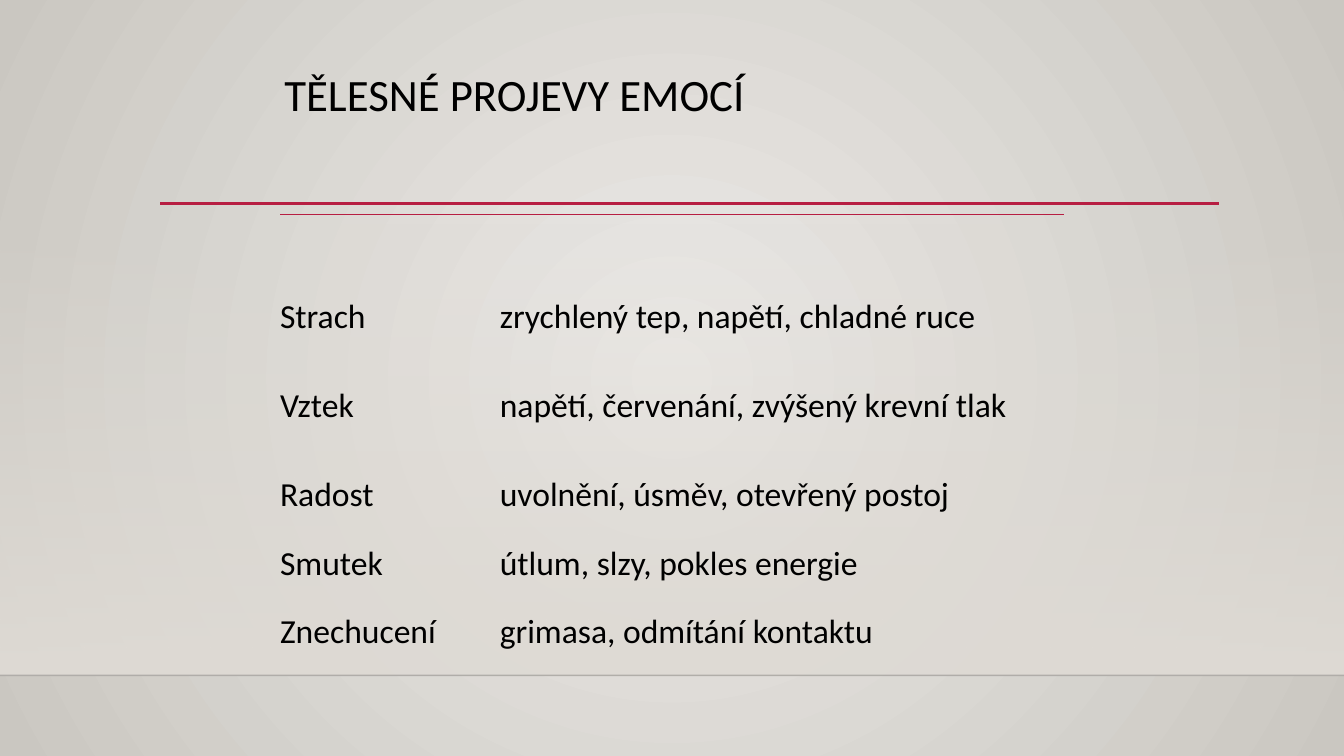
from lxml import etree
from pptx import Presentation
from pptx.dml.color import RGBColor
from pptx.enum.shapes import MSO_CONNECTOR, MSO_SHAPE
from pptx.enum.text import MSO_ANCHOR
from pptx.oxml.ns import qn
from pptx.util import Pt

STRAIGHT = MSO_CONNECTOR.STRAIGHT
RECTANGLE = MSO_SHAPE.RECTANGLE
MIDDLE = MSO_ANCHOR.MIDDLE

SLIDE_WIDTH, SLIDE_HEIGHT = 960, 540
NO_STYLE = "{2D5ABB26-0587-4C30-8999-92F81FD0307C}"
COLORS = {
    "center": "ECEAE7",
    "edge": "CAC7C1",
    "wall": "DFDBD5",
    "floor": "000001",
    "accent": "B71E42",
    "text": "000000",
}
TITLE = "TĚLESNÉ PROJEVY EMOCÍ"
EMOTIONS = [
    ("Strach", "zrychlený tep, napětí, chladné ruce"),
    ("Vztek", "napětí, červenání, zvýšený krevní tlak"),
    ("Radost", "uvolnění, úsměv, otevřený postoj"),
    ("Smutek", "útlum, slzy, pokles energie"),
    ("Znechucení", "grimasa, odmítání kontaktu"),
]
COLUMN_WIDTHS = [157, 403]
ROW_HEIGHTS = [49, 49, 78, 49, 49, 49]
CELL_FORMAT = {
    "margin_left": 0,
    "margin_right": Pt(14.4),
    "margin_top": Pt(7.2),
    "margin_bottom": Pt(7.2),
    "vertical_anchor": MIDDLE,
}


def rgb(name):
    return RGBColor.from_string(COLORS[name])


def set_format(target, values):
    for name, value in values.items():
        setattr(target, name, value)


def write(paragraph, text, size):
    paragraph.text = text
    font = paragraph.runs[0].font
    set_format(font, {"name": "Calibri", "size": Pt(size)})
    font.color.rgb = rgb("text")


def set_alpha(color_element, percent):
    etree.SubElement(color_element, qn("a:alpha")).set("val", str(percent * 1000))


def set_gradient(fill, names):
    fill.gradient()
    for stop, name in zip(fill.gradient_stops, names):
        stop.color.rgb = rgb(name)


def add_background(slide):
    set_gradient(slide.background.fill, ["center", "edge"])
    gradient = slide.element.find(".//" + qn("a:gradFill"))
    gradient.remove(gradient.find(qn("a:lin")))
    circle = etree.SubElement(gradient, qn("a:path"))
    circle.set("path", "circle")
    focus = etree.SubElement(circle, qn("a:fillToRect"))
    for side in "ltrb":
        focus.set(side, "50000")


def add_rule(slide, left, top, width, color, weight):
    rule = slide.shapes.add_connector(
        STRAIGHT, Pt(left), Pt(top), Pt(left + width), Pt(top))
    rule.line.color.rgb = rgb(color)
    rule.line.width = Pt(weight)
    etree.SubElement(rule.element.spPr, qn("a:effectLst"))
    return rule


def add_wall(slide, left, top, width, height):
    wall = slide.shapes.add_shape(
        RECTANGLE, Pt(left), Pt(top), Pt(width), Pt(height))
    wall.shadow.inherit = False
    wall.line.fill.background()
    set_gradient(wall.fill, ["wall", "wall"])
    wall.fill.gradient_angle = 270
    set_alpha(wall.element.find(".//" + qn("a:srgbClr")), 0)
    floor = add_rule(slide, left, top + height, width, "floor", 1)
    set_alpha(floor.element.find(".//" + qn("a:srgbClr")), 20)


def add_title(slide, left, top, width, height):
    frame = slide.shapes.add_textbox(
        Pt(left), Pt(top), Pt(width), Pt(height)).text_frame
    frame.word_wrap = True
    heading = frame.paragraphs[0]
    heading.line_spacing = 0.9
    write(heading, TITLE, 32)


def add_top_border(cell):
    border = etree.Element(qn("a:lnT"), w=str(Pt(0.75)))
    fill = etree.SubElement(border, qn("a:solidFill"))
    etree.SubElement(fill, qn("a:srgbClr"), val=COLORS["accent"])
    cell._tc.get_or_add_tcPr().insert(0, border)


def add_emotions(slide, left, top):
    frame = slide.shapes.add_table(
        len(ROW_HEIGHTS), len(COLUMN_WIDTHS), Pt(left), Pt(top),
        Pt(sum(COLUMN_WIDTHS)), Pt(sum(ROW_HEIGHTS)))
    table = frame.table
    set_format(table, {"first_row": False, "horz_banding": False})
    frame.element.find(".//" + qn("a:tableStyleId")).text = NO_STYLE
    for column, width in zip(table.columns, COLUMN_WIDTHS):
        column.width = Pt(width)
    for row, height in zip(table.rows, ROW_HEIGHTS):
        row.height = Pt(height)
    for cell in table.iter_cells():
        cell.fill.background()
    for cell in table.rows[0].cells:
        add_top_border(cell)
    for row_index, emotion in enumerate(EMOTIONS, 1):
        for column_index, text in enumerate(emotion):
            cell = table.cell(row_index, column_index)
            set_format(cell, CELL_FORMAT)
            write(cell.text_frame.paragraphs[0], text, 24)


def main():
    deck = Presentation()
    set_format(deck, {"slide_width": Pt(SLIDE_WIDTH), "slide_height": Pt(SLIDE_HEIGHT)})
    slide = deck.slides.add_slide(deck.slide_layouts[6])
    add_background(slide)
    add_wall(slide, 0, 159, SLIDE_WIDTH, 323.4)
    add_rule(slide, 114.5, 145.4, 756.5, "accent", 2.5)
    add_title(slide, 196, 48.2, 602, 86.4)
    add_emotions(slide, 200, 153.2)
    deck.save("out.pptx")


if __name__ == "__main__":
    main()
